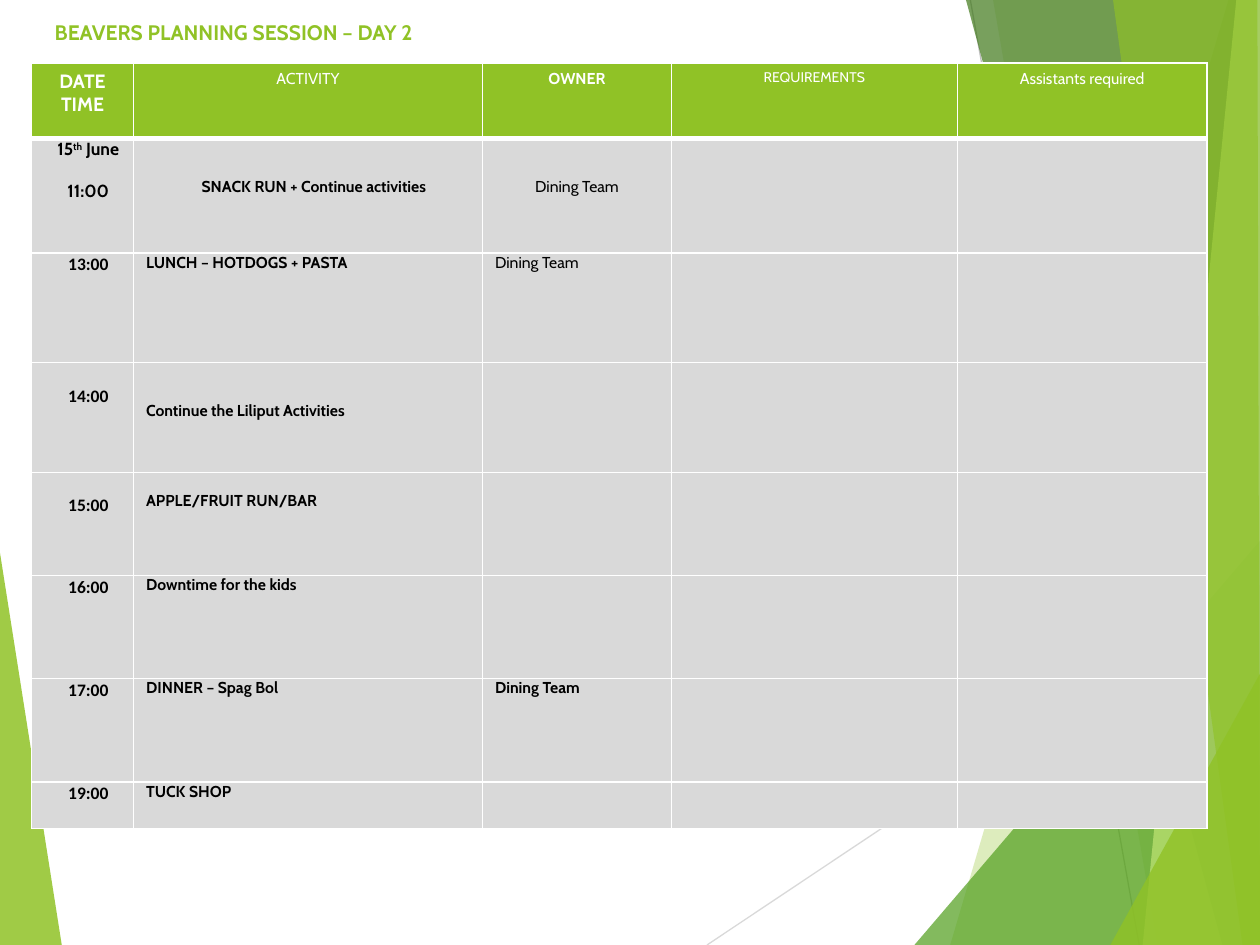
import pptx
import pptx.dml.color
import pptx.enum.shapes
import pptx.enum.text
import pptx.oxml.ns
import pptx.oxml.xmlchemy
import pptx.util

Pt = pptx.util.Pt
RGBColor = pptx.dml.color.RGBColor
PP_ALIGN = pptx.enum.text.PP_ALIGN
OxmlElement = pptx.oxml.xmlchemy.OxmlElement

GREEN = RGBColor(0x90, 0xC2, 0x26)
LEAF = RGBColor(0x54, 0xA0, 0x21)
FOREST = RGBColor(0x3F, 0x78, 0x19)
LIME = RGBColor(0xC0, 0xE4, 0x74)
PALE_GREY = RGBColor(0xD9, 0xD9, 0xD9)
MID_GREY = RGBColor(0xBF, 0xBF, 0xBF)
BLACK = RGBColor(0, 0, 0)
WHITE = RGBColor(0xFF, 0xFF, 0xFF)

WIDTH, HEIGHT = 720, 540
TOP_RIGHT, BOTTOM_RIGHT = (WIDTH, 0), (WIDTH, HEIGHT)

LEFT_WEDGE = ([(0, 316), (35.3, HEIGHT), (0, HEIGHT)], GREEN, 85)
RAYS = [
    ((404, HEIGHT), (WIDTH, 329), PALE_GREY),
    ((554.5, 0), (651, HEIGHT), MID_GREY),
]
RIGHT_FACETS = [
    ([(702, 0), (543, HEIGHT), BOTTOM_RIGHT, TOP_RIGHT], GREEN, 30),
    ([(567.5, 0), (661.5, HEIGHT), BOTTOM_RIGHT, TOP_RIGHT], GREEN, 20),
    ([(522.5, HEIGHT), (WIDTH, 309), BOTTOM_RIGHT], LEAF, 72),
    ([(552, 0), (698.5, HEIGHT), BOTTOM_RIGHT, TOP_RIGHT], FOREST, 70),
    ([(706.5, 0), (653, HEIGHT), BOTTOM_RIGHT, TOP_RIGHT], LIME, 70),
    ([(636, 0), (710, HEIGHT), BOTTOM_RIGHT, (718.5, 0)], GREEN, 65),
    ([(634.5, HEIGHT), (WIDTH, 385), BOTTOM_RIGHT], GREEN, 80),
]

COLUMN_WIDTHS = [58.3, 199.4, 108, 163.4, 142.6]
ROW_HEIGHTS = [43.2, 65.5, 62.6, 62.6, 59, 59, 59, 26.6]
# Header text, size, bold
HEADERS = [
    (["DATE", "TIME"], 11, True),
    (["ACTIVITY"], 9, False),
    (["OWNER"], 9, True),
    (["REQUIREMENTS"], 8, False),
    (["Assistants required"], 9, False),
]
# Time, its top margin, activity, its top margin, owner, owner in bold
SESSIONS = [
    ("13:00", 0.7, "LUNCH – HOTDOGS + PASTA", 0, "Dining Team", False),
    ("14:00", 13, "Continue the Liliput Activities", 22, "", False),
    ("15:00", 13, "APPLE/FRUIT RUN/BAR", 11, "", False),
    ("16:00", 0.7, "Downtime for the kids", 0, "", False),
    ("17:00", 0.7, "DINNER – Spag Bol", 0, "Dining Team", True),
    ("19:00", 0.7, "TUCK SHOP", 0, "", False),
]


def add_run(paragraph, text, size, color=BLACK, bold=True, name="Cabin"):
    run = paragraph.add_run()
    run.text = text
    run.font.size = Pt(size)
    run.font.name = name
    run.font.bold = bold
    run.font.color.rgb = color
    return run


def add_facet(slide, points, color, opacity):
    """Add a borderless polygon; opacity is in percent."""
    corners = [(Pt(x), Pt(y)) for x, y in points]
    builder = slide.shapes.build_freeform(*corners[0])
    builder.add_line_segments(corners[1:], close=True)
    shape = builder.convert_to_shape()
    shape.shadow.inherit = False
    shape.line.fill.background()
    shape.fill.solid()
    shape.fill.fore_color.rgb = color
    color_element = shape._element.spPr.find(".//" + pptx.oxml.ns.qn("a:srgbClr"))
    alpha = OxmlElement("a:alpha")
    alpha.set("val", str(opacity * 1000))
    color_element.append(alpha)


def add_ray(slide, start, end, color):
    connector = slide.shapes.add_connector(
        pptx.enum.shapes.MSO_CONNECTOR.STRAIGHT, *map(Pt, start + end))
    connector.line.color.rgb = color
    connector.line.width = Pt(0.75)
    connector._element.spPr.append(OxmlElement("a:effectLst"))


def set_borders(cell, bottom_width):
    properties = cell._tc.get_or_add_tcPr()
    widths = {"a:lnL": 1, "a:lnR": 1, "a:lnT": 1, "a:lnB": bottom_width}
    for position, (tag, width) in enumerate(widths.items()):
        line = OxmlElement(tag)
        line.set("w", str(Pt(width)))
        fill = OxmlElement("a:solidFill")
        color = OxmlElement("a:srgbClr")
        color.set("val", str(WHITE))
        fill.append(color)
        line.append(fill)
        properties.insert(position, line)


def set_margins(cell, top, right, bottom=0):
    cell.margin_left = Pt(7.2)
    cell.margin_top = Pt(top)
    cell.margin_right = Pt(right)
    cell.margin_bottom = Pt(bottom)


def fill_cell(cell, text, size, top, right, bottom=0, centered=False, **font):
    set_margins(cell, top, right, bottom)
    paragraph = cell.text_frame.paragraphs[0]
    paragraph.alignment = PP_ALIGN.CENTER if centered else PP_ALIGN.LEFT
    if text:
        add_run(paragraph, text, size, **font)


def fill_header(cells):
    for cell, (lines, size, bold) in zip(cells, HEADERS):
        frame = cell.text_frame
        for index, line in enumerate(lines):
            paragraph = frame.add_paragraph() if index else frame.paragraphs[0]
            paragraph.alignment = PP_ALIGN.CENTER
            add_run(paragraph, line, size, WHITE, bold)


def fill_first_session(cells):
    set_margins(cells[0], 0, 0.7)
    date = cells[0].text_frame.paragraphs[0]
    add_run(date, "15", 10)
    add_run(date, "th", 10).font._element.set("baseline", "30000")
    add_run(date, " June", 10)
    time = cells[0].text_frame.add_paragraph()
    time.space_before = Pt(12.2)
    add_run(time, "11:00", 10)
    date.alignment = time.alignment = PP_ALIGN.CENTER
    fill_cell(cells[1], "SNACK RUN + Continue activities", 9, 22, 0.7, centered=True)
    fill_cell(cells[2], "Dining Team", 9, 22, 7.2, 3.6, centered=True, bold=False)


def fill_session(cells, time, time_top, activity, activity_top, owner, owner_bold):
    fill_cell(cells[0], time, 10, time_top, 0.7, centered=True, name="Calibri")
    fill_cell(cells[1], activity, 9, activity_top, 5)
    fill_cell(cells[2], owner, 9, 0, 7.2, bold=owner_bold)


def add_schedule(slide):
    frame = slide.shapes.add_table(
        len(ROW_HEIGHTS), len(COLUMN_WIDTHS), Pt(18), Pt(36),
        Pt(sum(COLUMN_WIDTHS)), Pt(sum(ROW_HEIGHTS)))
    table = frame.table
    table.horz_banding = False
    for column, width in zip(table.columns, COLUMN_WIDTHS):
        column.width = Pt(width)
    for index, (row, height) in enumerate(zip(table.rows, ROW_HEIGHTS)):
        row.height = Pt(height)
        for cell in row.cells:
            cell.fill.solid()
            cell.fill.fore_color.rgb = PALE_GREY if index else GREEN
            set_borders(cell, 1 if index else 3)
            if index:
                set_margins(cell, 0, 7.2)
    rows = [list(row.cells) for row in table.rows]
    fill_header(rows[0])
    fill_first_session(rows[1])
    for cells, session in zip(rows[2:], SESSIONS):
        fill_session(cells, *session)


def format_title(title):
    title.left, title.top = Pt(24), Pt(-5.5)
    title.width, title.height = Pt(666), Pt(48)
    frame = title.text_frame
    frame.word_wrap = True
    frame.vertical_anchor = pptx.enum.text.MSO_ANCHOR.MIDDLE
    paragraph = frame.paragraphs[0]
    paragraph.alignment = PP_ALIGN.LEFT
    add_run(paragraph, "BEAVERS PLANNING SESSION – DAY 2", 12, GREEN)


def main():
    presentation = pptx.Presentation()
    presentation.slide_width, presentation.slide_height = Pt(WIDTH), Pt(HEIGHT)
    slide = presentation.slides.add_slide(presentation.slide_layouts[5])
    format_title(slide.shapes.title)
    add_facet(slide, *LEFT_WEDGE)
    for ray in RAYS:
        add_ray(slide, *ray)
    for facet in RIGHT_FACETS:
        add_facet(slide, *facet)
    add_schedule(slide)
    presentation.save("out.pptx")


if __name__ == "__main__":
    main()
